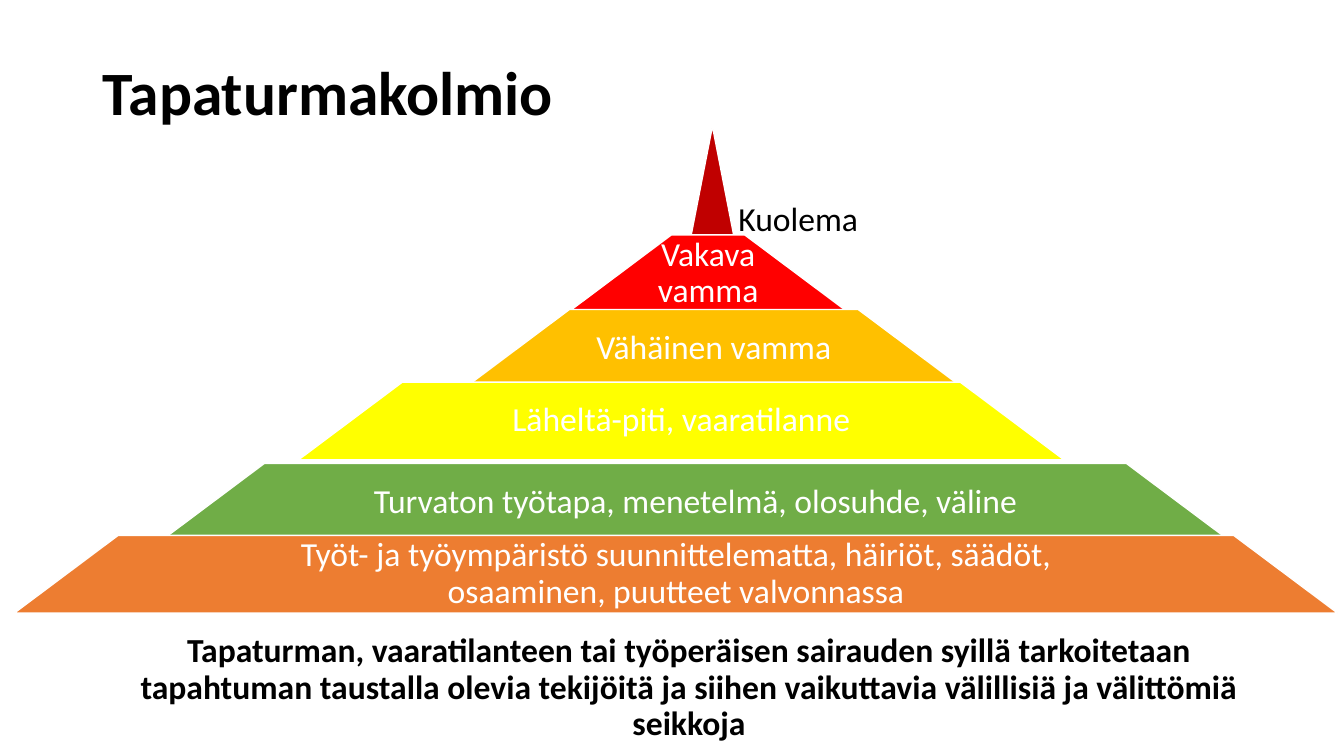
from pptx import Presentation
from pptx.dml.color import RGBColor
from pptx.enum.shapes import MSO_SHAPE
from pptx.enum.text import MSO_ANCHOR, MSO_AUTO_SIZE, PP_ALIGN
from pptx.util import Cm, Pt

TRAPEZOID = MSO_SHAPE.TRAPEZOID
TOP, MIDDLE = MSO_ANCHOR.TOP, MSO_ANCHOR.MIDDLE
LEFT, CENTER = PP_ALIGN.LEFT, PP_ALIGN.CENTER
NO_AUTOFIT = MSO_AUTO_SIZE.NONE

BLACK = RGBColor(0x00, 0x00, 0x00)
WHITE = RGBColor(0xFF, 0xFF, 0xFF)
DARK_RED = RGBColor(0xC0, 0x00, 0x00)
RED = RGBColor(0xFF, 0x00, 0x00)
AMBER = RGBColor(0xFF, 0xC0, 0x00)
YELLOW = RGBColor(0xFF, 0xFF, 0x00)
GREEN = RGBColor(0x70, 0xAD, 0x47)
ORANGE = RGBColor(0xED, 0x7D, 0x31)

LAYER_HEIGHT = 1.96
LAYER_SLOPE = 1.337
LABEL_SHARE = 0.65

# left, top, width in cm, colour, label
LAYERS = [
    (14.3, 5.92, 7.09, RED, "Vakava vamma"),
    (11.73, 7.8, 12.52, AMBER, "Vähäinen vamma"),
    (7.52, 9.63, 19.3, YELLOW, "Läheltä-piti, vaaratilanne"),
    (4.04, 11.68, 26.97, GREEN, "Turvaton työtapa, menetelmä, olosuhde, väline"),
    (0.36, 13.49, 33.35, ORANGE,
     "Työt- ja työympäristö suunnittelematta, häiriöt, säädöt, "
     "osaaminen, puutteet valvonnassa"),
]


class TriangleSlide:
    font_name = "Calibri"

    def __init__(self, presentation):
        self.slide = presentation.slides.add_slide(presentation.slide_layouts[5])

    def set_text(self, holder, text, size=24, color=BLACK, bold=False,
                 align=CENTER, spacing=0.9, **frame_format):
        """Fill a shape's text frame and format its only paragraph."""
        frame = holder.text_frame
        frame.text = text
        frame_values = {"word_wrap": True, "auto_size": NO_AUTOFIT,
                        "vertical_anchor": TOP, **frame_format}
        for name, value in frame_values.items():
            setattr(frame, name, value)
        paragraph = frame.paragraphs[0]
        paragraph.alignment = align
        paragraph.line_spacing = spacing
        font = paragraph.runs[0].font
        font_values = {"name": self.font_name, "size": Pt(size), "bold": bold}
        for name, value in font_values.items():
            setattr(font, name, value)
        font.color.rgb = color

    def title(self, text, left, top, width, height):
        heading = self.slide.shapes.title
        box = {"left": left, "top": top, "width": width, "height": height}
        for name, value in box.items():
            setattr(heading, name, Cm(value))
        self.set_text(heading, text, size=44, bold=True, align=LEFT,
                      vertical_anchor=MIDDLE)

    def text(self, text, left, top, width, height, **style):
        box = self.slide.shapes.add_textbox(Cm(left), Cm(top), Cm(width), Cm(height))
        self.set_text(box, text, **style)

    def trapezoid(self, left, top, width, height, color, slope):
        layer = self.slide.shapes.add_shape(
            TRAPEZOID, Cm(left), Cm(top), Cm(width), Cm(height))
        layer.adjustments[0] = slope
        layer.shadow.inherit = False
        layer.fill.solid()
        layer.fill.fore_color.rgb = color
        layer.line.color.rgb = WHITE
        layer.line.width = Pt(1)

    def layer(self, left, top, width, color, label):
        """Draw one pyramid layer with its label centred on it."""
        self.trapezoid(left, top, width, LAYER_HEIGHT, color, LAYER_SLOPE)
        margins = {f"margin_{side}": Cm(0.08)
                   for side in ("left", "top", "right", "bottom")}
        self.text(label, left + width * (1 - LABEL_SHARE) / 2, top,
                  width * LABEL_SHARE, LAYER_HEIGHT, color=WHITE,
                  vertical_anchor=MIDDLE, **margins)


def main():
    presentation = Presentation()
    presentation.slide_width = Cm(33.87)
    presentation.slide_height = Cm(19.05)

    slide = TriangleSlide(presentation)
    slide.title("Tapaturmakolmio", 2.34, 1.02, 29.21, 2.77)
    slide.trapezoid(17.42, 3.18, 1.07, 2.74, DARK_RED, slope=0.5)
    for layer in LAYERS:
        slide.layer(*layer)
    slide.text(
        "Tapaturman, vaaratilanteen tai työperäisen sairauden syillä tarkoitetaan "
        "tapahtuman taustalla olevia tekijöitä ja siihen vaikuttavia välillisiä "
        "ja välittömiä seikkoja",
        2.34, 15.85, 30.05, 2.21, bold=True)
    slide.text("Kuolema", 18.36, 4.85, 3.56, 1.27, align=LEFT, spacing=1.0,
               word_wrap=False)

    presentation.save("out.pptx")


if __name__ == "__main__":
    main()
